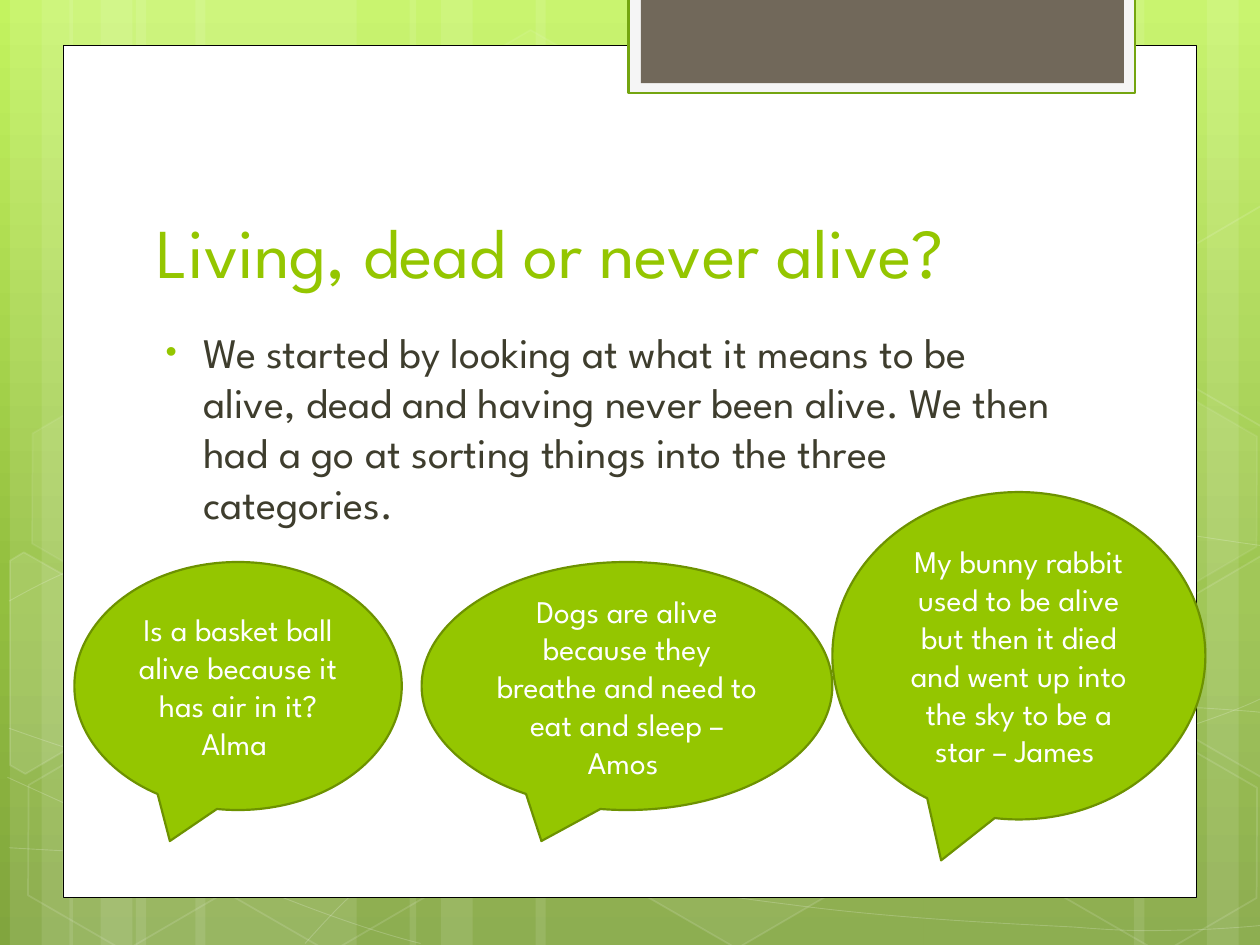
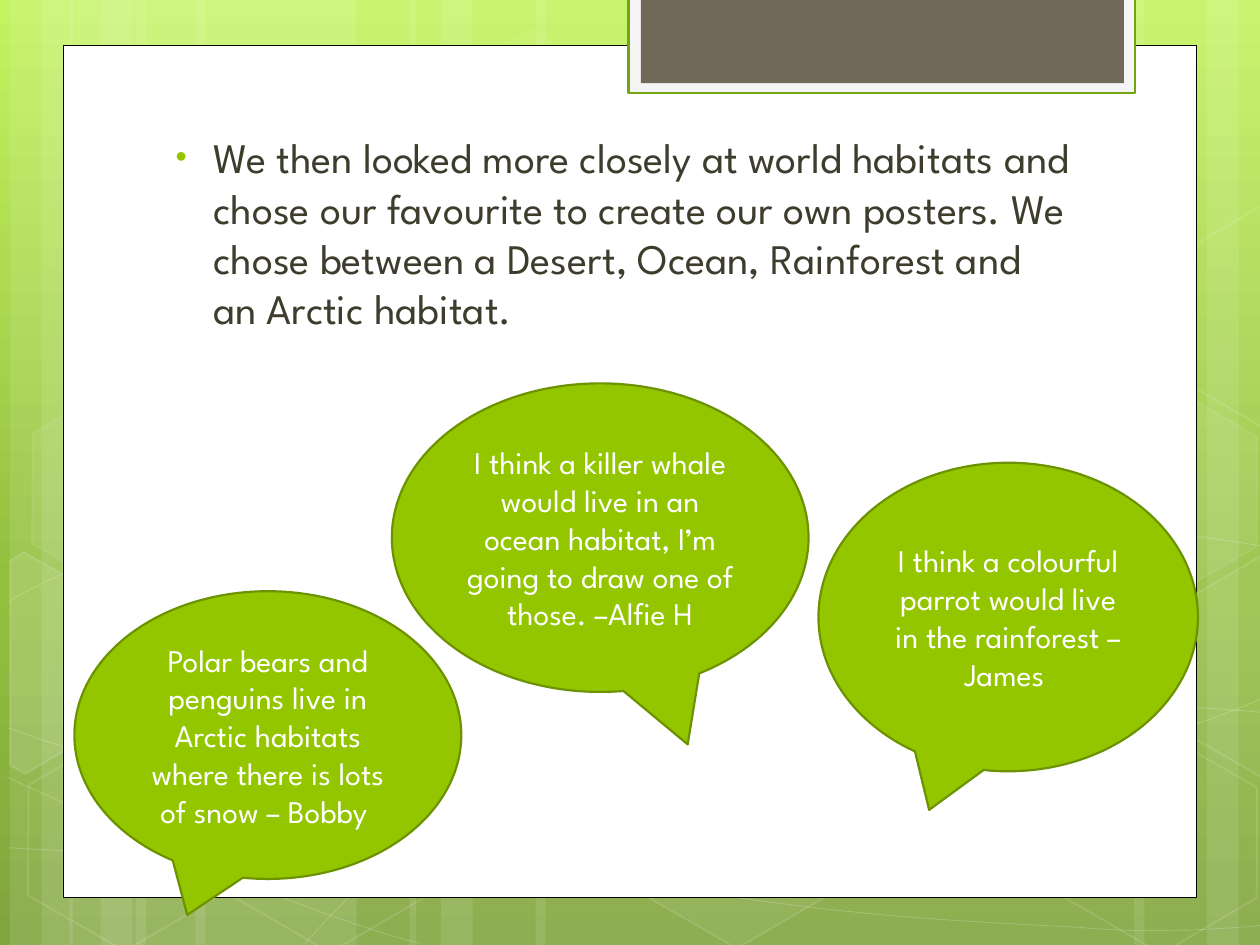
from copy import deepcopy
from math import cos, radians, sin
from typing import NamedTuple

from lxml import etree
from pptx import Presentation
from pptx.dml.color import RGBColor
from pptx.enum.shapes import MSO_SHAPE
from pptx.enum.text import MSO_ANCHOR, MSO_AUTO_SIZE, PP_ALIGN
from pptx.oxml.ns import qn
from pptx.util import Cm, Pt

RECTANGLE, HEXAGON, CALLOUT = MSO_SHAPE.RECTANGLE, MSO_SHAPE.HEXAGON, MSO_SHAPE.OVAL_CALLOUT
TOP, MIDDLE, BOTTOM = MSO_ANCHOR.TOP, MSO_ANCHOR.MIDDLE, MSO_ANCHOR.BOTTOM
LEFT, CENTER = PP_ALIGN.LEFT, PP_ALIGN.CENTER
NO_FIT = MSO_AUTO_SIZE.NONE
TITLE_ONLY, BLANK = 5, 6
FONT = "League Spartan"
COLORS = {
    "white": "FFFFFF", "black": "000000", "lime": "94C600", "lime_edge": "6D9200",
    "text": "3E3D2D", "tab": "71685A", "tab_frame": "F5F5F5", "tab_edge": "74A510",
    "sky_top": "C3F35F", "sky_middle": "93BF3F", "sky_bottom": "81A53E",
}
SKY = [(0, "sky_top"), (0.62, "sky_middle"), (1, "sky_bottom")]
FORMATS = {
    "title": {"size": Pt(40), "color": "lime", "align": LEFT, "anchor": BOTTOM},
    "body": {"size": Pt(24), "color": "text", "align": LEFT, "anchor": TOP},
    "callout": {"size": Pt(18), "color": "white", "align": CENTER, "anchor": MIDDLE},
}


class Box(NamedTuple):
    """A rectangle in centimetres."""

    left: float
    top: float
    width: float
    height: float

    def inside(self, left, top, width, height):
        """Return a box placed relative to this one."""
        return Box(self.left + left, self.top + top, width, height)

    def lengths(self):
        """Return the four values as lengths."""
        return [Cm(value) for value in self]


PAGE = Box(0, 0, 25.4, 19.05)
BODY_SIZE = (18.82, 9.75)
TILT = 30
BANDS = [
    (2.74, 4.45), (0.2, 1.27), (0.84, 2.11), (3.94, 4.45), (1.4, 1.27), (2.03, 2.11),
    (18.62, 4.45), (24.33, 1.27), (22.86, 2.11), (10.8, 7.82), (8.26, 1.27), (8.89, 2.11),
]
CURVES = [
    [(0.18, 17.09), (1.55, 17.17), (2.92, 17.25), (4.83, 17.22), (6.73, 17.2), (9.09, 17.15), (11.63, 16.89),
     (14.17, 16.64), (17.78, 16.15), (20.12, 15.67), (22.43, 15.19), (24.82, 14.43), (25.58, 14)],
    [(0.18, 12.12), (0.91, 11.71), (1.65, 11.33), (3.07, 10.95), (4.52, 10.57), (6.58, 10.01), (8.81, 9.83),
     (11.07, 9.65), (13.82, 9.63), (16.61, 9.83), (19.41, 10.03), (24.05, 10.82), (25.58, 11.02)],
    [(0.15, 15.67), (3.23, 17.07), (6.27, 18.47), (8.48, 19.02)],
    [(0.18, 14.68), (0.97, 14.96), (1.78, 15.24), (3.25, 15.65), (4.72, 16.03), (6.93, 16.66), (9.07, 17.09),
     (11.18, 17.53), (13.84, 17.98), (15.95, 18.24), (18.06, 18.52), (20.32, 18.62), (21.67, 18.69),
     (22.99, 18.8), (23.34, 18.75), (24, 18.75), (24.66, 18.72), (25.12, 18.69), (25.58, 18.64)],
    [(6.15, 19.02), (6.6, 18.52), (7.06, 18.01), (7.67, 17.55), (8.28, 17.09), (9.14, 16.59), (9.86, 16.23),
     (10.57, 15.88), (11, 15.72), (11.94, 15.47), (12.85, 15.21), (14.55, 14.86), (15.44, 14.68),
     (16.36, 14.5), (16.48, 14.5), (17.27, 14.45), (18.06, 14.38), (19.3, 14.3), (20.17, 14.27),
     (21.06, 14.25), (22.5, 14.27), (22.5, 14.27), (22.5, 14.27), (24.21, 14.27), (24.21, 14.27),
     (24.66, 14.3), (25.1, 14.33), (25.32, 14.35), (25.55, 14.38), (25.48, 14.35), (25.55, 14.38)],
]
HEXAGONS = [
    (8.48, 0.91, 4, 8), (12.62, 14.96, 6, 12), (0.28, 15.01, 0, 12), (0.36, 7.92, 7, 8),
    (4.42, 15.04, 0, 12), (19.13, 11.51, 10, 12), (21.18, 15.06, 0, 12), (21.18, 7.98, 7, 8),
]
CUT_HEXAGONS = [
    ((0.91, 13.59), 10,
     [(0.2, 11.3), (0.48, 11.13), (2.44, 12.24), (2.41, 14.48), (0.51, 15.6), (0.2, 15.42)]),
    ((25.02, 13.21), 4,
     [(23.52, 12.32), (25.43, 11.2), (25.63, 11.33), (25.63, 15.57), (25.45, 15.67), (23.52, 14.55)]),
    ((25.02, 6.12), 0,
     [(23.52, 5.26), (25.43, 4.14), (25.65, 4.27), (25.63, 8.51), (25.45, 8.61), (23.52, 7.49)]),
]
SLIDES = [
    ("Living, dead or never alive?",
     (2.88, 6.45, "We started by looking at what it means to be alive, dead and having never been alive. "
      "We then had a go at sorting things into the three categories."),
     [((1.5, 11.33, 6.6, 5), None, "Is a basket ball alive because it has air in it? Alma "),
      ((8.5, 11.33, 8.28, 5), None, "Dogs are alive because they breathe and need to eat and sleep – Amos "),
      ((16.78, 9.92, 7.52, 6.6), None, "My bunny rabbit used to be alive but then it died "
       "and went up into the sky to be a star – James ")]),
    (None,
     (3.08, 2.53, "We then looked more closely at world habitats and chose our favourite to create "
      "our own posters. We chose between a Desert, Ocean, Rainforest and an Arctic habitat."),
     [((1.5, 11.92, 7.8, 5.8), None,
       "Polar bears and penguins live in Arctic habitats where there is lots of snow – Bobby "),
      ((7.9, 7.73, 8.4, 6.22), (0.21, 0.67),
       "I think a killer whale would live in an ocean habitat, I’m going to draw one of those. –Alfie H"),
      ((16.5, 9.33, 7.65, 6.22), None, "I think a colourful parrot would live in the rainforest – James ")]),
]


def rgb(name):
    """Return the named colour."""
    return RGBColor.from_string(COLORS[name])


def set_alpha(shape, route, percent):
    """Make the solid fill found along the route partly transparent."""
    color = shape.element.spPr.find("/".join(qn(tag) for tag in route))[0]
    etree.SubElement(color, qn("a:alpha"), val=str(percent * 1000))


def paint(shape, fill=None, line=None, weight=1, fill_alpha=100, line_alpha=100):
    """Set fill, outline and transparency, and drop the shadow."""
    shape.shadow.inherit = False
    if fill and fill_alpha:
        shape.fill.solid()
        shape.fill.fore_color.rgb = rgb(fill)
        if fill_alpha < 100:
            set_alpha(shape, ["a:solidFill"], fill_alpha)
    else:
        shape.fill.background()
    if line:
        shape.line.color.rgb = rgb(line)
        shape.line.width = Pt(weight)
        if line_alpha < 100:
            set_alpha(shape, ["a:ln", "a:solidFill"], line_alpha)
    else:
        shape.line.fill.background()


def write(shape, text, kind):
    """Write one formatted paragraph and return it."""
    style = FORMATS[kind]
    frame = shape.text_frame
    frame.text = text
    para = frame.paragraphs[0]
    font = para.runs[0].font
    frame_values = {"word_wrap": True, "auto_size": NO_FIT, "vertical_anchor": style["anchor"]}
    font_values = {"name": FONT, "size": style["size"]}
    for target, values in [(frame, frame_values), (para, {"alignment": style["align"]}), (font, font_values)]:
        for name, value in values.items():
            setattr(target, name, value)
    font.color.rgb = rgb(style["color"])
    return para


def add_outline(page, box, points, close):
    """Draw a freeform through the points, relative to the box."""
    spots = [(Cm(box.left + x), Cm(box.top + y)) for x, y in points]
    builder = page.shapes.build_freeform(*spots[0], scale=1.0)
    builder.add_line_segments(spots[1:], close=close)
    return builder.convert_to_shape()


def add_curve(page, box, knots):
    """Draw a chain of cubic curves, keeping straight parts as lines."""
    curve = add_outline(page, box, knots, False)
    lines = list(curve.element.iter(qn("a:lnTo")))
    for start in range(0, len(lines), 3):
        first, second, last = lines[start:start + 3]
        corners = knots[start:start + 4]
        if corners[0] != corners[1] or corners[2] != corners[3]:
            last.tag = qn("a:cubicBezTo")
            last[:0] = [first[0], second[0]]
        for line in (first, second):
            line.getparent().remove(line)
    return curve


def add_cut_hexagon(page, box, center, points):
    """Draw a tilted outline, turned about its center."""
    cosine, sine = cos(radians(TILT)), sin(radians(TILT))
    offsets = [(x - center[0], y - center[1]) for x, y in points + points[:1]]
    level = [(center[0] + x * cosine + y * sine, center[1] + y * cosine - x * sine) for x, y in offsets]
    outline = add_outline(page, box, level, True)
    outline.rotation = TILT
    return outline


def add_backdrop(page, box):
    """Draw the bands, curves and hexagons behind the sheet."""
    for left, width in BANDS:
        band = page.shapes.add_shape(RECTANGLE, *box.inside(left, 0, width, box.height).lengths())
        paint(band, "white", fill_alpha=10)
    for knots in CURVES:
        paint(add_curve(page, box, knots), line="white", weight=0.5, line_alpha=20)
    for left, top, fill_alpha, line_alpha in HEXAGONS:
        hexagon = page.shapes.add_shape(HEXAGON, *box.inside(left, top, 4.45, 3.86).lengths())
        hexagon.adjustments[0] = 0.285
        hexagon.rotation = TILT
        paint(hexagon, "white", "white", 1, fill_alpha, line_alpha)
    for center, fill_alpha, points in CUT_HEXAGONS:
        paint(add_cut_hexagon(page, box, center, points), "white", "white", 1, fill_alpha, 12)


def add_sheet(page, box):
    """Draw the white sheet and the tab at its top."""
    for place, fill, line, weight in [
        ((1.27, 0.91, 22.86, 17.19), "white", "black", 0.5),
        ((12.67, -0.05, 10.21, 1.93), "tab_frame", "tab_edge", 1.25),
        ((12.92, -0.05, 9.74, 1.73), "tab", None, 0),
    ]:
        paint(page.shapes.add_shape(RECTANGLE, *box.inside(*place).lengths()), fill, line, weight)


def set_sky(master):
    """Give the master its three-stop gradient."""
    fill = master.background.fill
    fill.gradient()
    fill.gradient_angle = 270
    stop_list = master.element.find(".//" + qn("a:gsLst"))
    stop_list.append(deepcopy(stop_list[0]))
    for stop, (position, color) in zip(fill.gradient_stops, SKY):
        stop.position = position
        stop.color.rgb = rgb(color)


def move_to_master(page, master):
    """Move the drawn shapes of a page to the master."""
    drawn = [shape for shape in page.shapes if not shape.is_placeholder]
    for number, shape in enumerate(drawn, 100):
        shape.element.nvSpPr.cNvPr.set("id", str(number))
        master.element.cSld.spTree.append(shape.element)


def add_body(page, box, text):
    """Add the bulleted text."""
    para = write(page.shapes.add_textbox(*box.lengths()), text, "body")
    para.space_before = Pt(4.8)
    properties = para._p.get_or_add_pPr()
    properties.set("marL", str(Cm(0.97)))
    properties.set("indent", str(Cm(-0.76)))
    bullet_color = etree.SubElement(properties, qn("a:buClr"))
    etree.SubElement(bullet_color, qn("a:srgbClr"), val=COLORS["lime"])
    etree.SubElement(properties, qn("a:buSzPct"), val="76000")
    etree.SubElement(properties, qn("a:buFont"), typeface="Arial")
    etree.SubElement(properties, qn("a:buChar"), char="•")


def add_callout(page, box, tail, text):
    """Add a speech bubble with its quotation."""
    callout = page.shapes.add_shape(CALLOUT, *box.lengths())
    paint(callout, "lime", "lime_edge", 1.25)
    for index, value in enumerate(tail or ()):
        callout.adjustments[index] = value
    write(callout, text, "callout")


def add_content(page, box, title, body, callouts):
    """Fill a page with its title, text and callouts."""
    if title:
        heading = page.shapes.title
        heading.left, heading.top, heading.width, heading.height = box.inside(2.9, 2.84, 19.51, 3.18).lengths()
        write(heading, title, "title")
    left, top, text = body
    add_body(page, box.inside(left, top, *BODY_SIZE), text)
    for place, tail, quotation in callouts:
        add_callout(page, box.inside(*place), tail, quotation)


def main():
    """Build and save the deck."""
    deck = Presentation()
    deck.slide_width, deck.slide_height = Cm(PAGE.width), Cm(PAGE.height)
    set_sky(deck.slide_master)
    for title, body, callouts in SLIDES:
        page = deck.slides.add_slide(deck.slide_layouts[TITLE_ONLY if title else BLANK])
        if len(deck.slides) == 1:
            add_backdrop(page, PAGE)
            add_sheet(page, PAGE)
            move_to_master(page, deck.slide_master)
        add_content(page, PAGE, title, body, callouts)
    deck.save("out.pptx")


if __name__ == "__main__":
    main()
